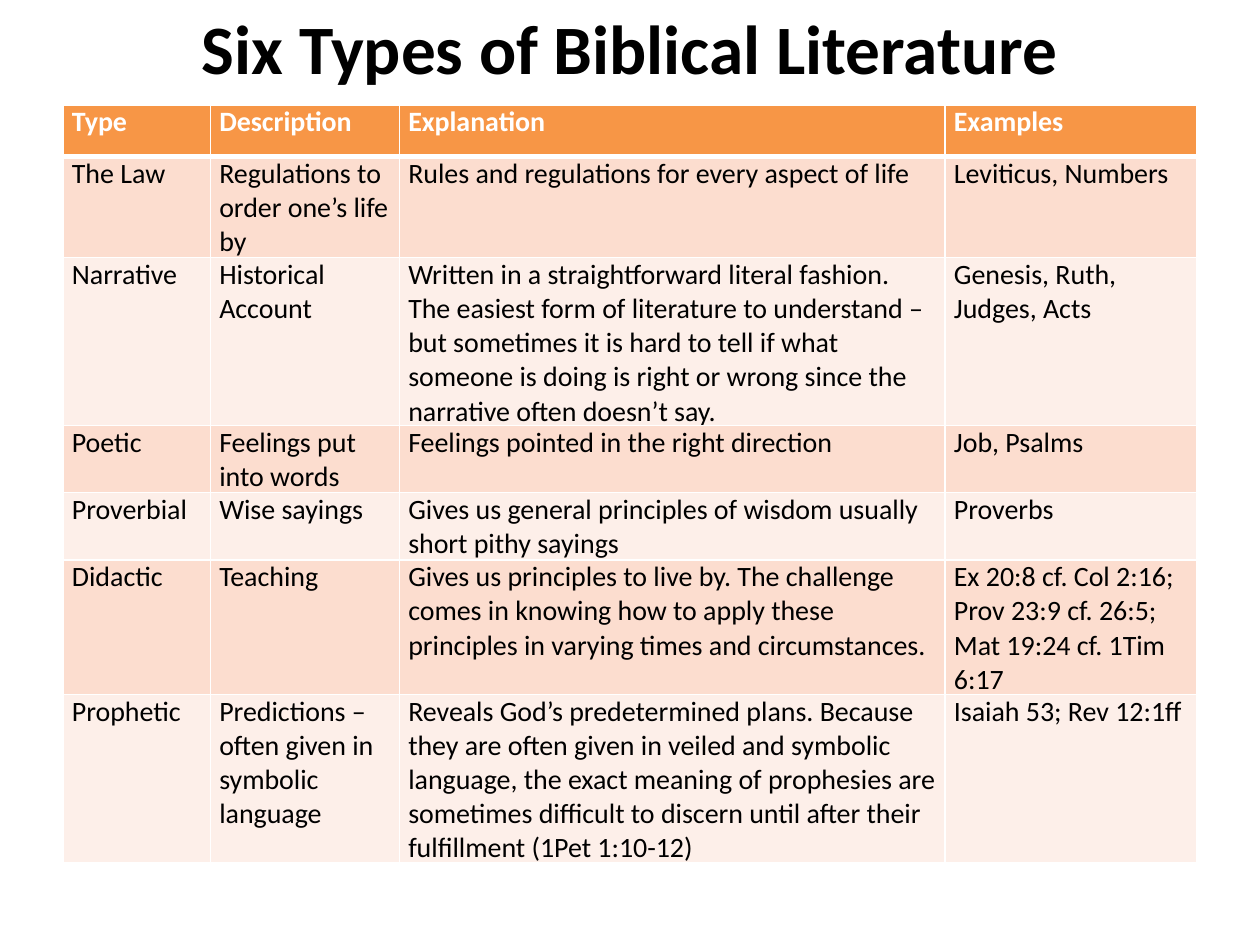
from collections import namedtuple
from dataclasses import dataclass

from lxml.etree import SubElement
from pptx import Presentation
from pptx.dml.color import RGBColor
from pptx.enum.text import MSO_ANCHOR, PP_ALIGN
from pptx.oxml.ns import qn
from pptx.util import Cm, Pt

Box = namedtuple("Box", "left top width height")


@dataclass(frozen=True)
class Theme:
    font: str = "Calibri"
    ink: str = "000000"
    paper: str = "FFFFFF"
    header: str = "F79646"
    bands: tuple = ("FCDDCF", "FDEFE9")
    title_size: float = 39.6
    table_size: float = 16
    thin_line: float = 1
    thick_line: float = 3


THEME = Theme()
TITLE = "Six Types of Biblical Literature"
COLUMN_WIDTHS = (2.97, 3.81, 11, 5.08)
ROW_HEIGHT = 1.04
CELL_MARGIN = 0.18
LITERATURE = [
    ("Type", "Description", "Explanation", "Examples"),
    ("The Law", "Regulations to order one’s life by",
     "Rules and regulations for every aspect of life", "Leviticus, Numbers"),
    ("Narrative", "Historical Account",
     "Written in a straightforward literal fashion. The easiest form of literature "
     "to understand – but sometimes it is hard to tell if what someone is doing is "
     "right or wrong since the narrative often doesn’t say.",
     "Genesis, Ruth, Judges, Acts"),
    ("Poetic", "Feelings put into words",
     "Feelings pointed in the right direction", "Job, Psalms"),
    ("Proverbial", "Wise sayings",
     "Gives us general principles of wisdom usually short pithy sayings", "Proverbs"),
    ("Didactic", "Teaching",
     "Gives us principles to live by. The challenge comes in knowing how to apply "
     "these principles in varying times and circumstances.",
     "Ex 20:8 cf. Col 2:16; Prov 23:9 cf. 26:5; Mat 19:24 cf. 1Tim 6:17"),
    ("Prophetic", "Predictions – often given in symbolic language",
     "Reveals God’s predetermined plans. Because they are often given in veiled and "
     "symbolic language, the exact meaning of prophesies are sometimes difficult to "
     "discern until after their fulfillment (1Pet 1:10-12)",
     "Isaiah 53; Rev 12:1ff"),
]


def format_text(frame, size, color, bold):
    for para in frame.paragraphs:
        for span in para.runs:
            span.font.name = THEME.font
            span.font.size = Pt(size)
            span.font.bold = bold
            span.font.color.rgb = RGBColor.from_string(color)


def set_borders(cell, top, bottom):
    properties = cell._tc.get_or_add_tcPr()
    widths = {"L": THEME.thin_line, "R": THEME.thin_line, "T": top, "B": bottom}
    for side, width in widths.items():
        line = SubElement(properties, qn(f"a:ln{side}"), w=str(Pt(width)))
        fill = SubElement(line, qn("a:solidFill"))
        SubElement(fill, qn("a:srgbClr"), val=THEME.paper)


def add_title(page, box):
    title = page.shapes.add_textbox(*map(Cm, box))
    frame = title.text_frame
    frame.word_wrap = True
    frame.vertical_anchor = MSO_ANCHOR.MIDDLE
    frame.text = TITLE
    frame.paragraphs[0].alignment = PP_ALIGN.CENTER
    format_text(frame, THEME.title_size, THEME.ink, True)


def fill_cell(cell, text, row_index):
    is_header = row_index == 0
    cell.margin_left = cell.margin_right = Cm(CELL_MARGIN)
    cell.margin_top = cell.margin_bottom = 0
    set_borders(
        cell,
        top=THEME.thick_line if row_index == 1 else THEME.thin_line,
        bottom=THEME.thick_line if is_header else THEME.thin_line,
    )
    background = THEME.header if is_header else THEME.bands[(row_index - 1) % 2]
    cell.fill.solid()
    cell.fill.fore_color.rgb = RGBColor.from_string(background)
    cell.text_frame.text = text
    color = THEME.paper if is_header else THEME.ink
    format_text(cell.text_frame, THEME.table_size, color, is_header)


def add_literature_table(page, box):
    table = page.shapes.add_table(
        len(LITERATURE), len(COLUMN_WIDTHS), *map(Cm, box)
    ).table
    for column, width in zip(table.columns, COLUMN_WIDTHS):
        column.width = Cm(width)
    for row_index, (row, texts) in enumerate(zip(table.rows, LITERATURE)):
        row.height = Cm(ROW_HEIGHT)
        for cell, text in zip(row.cells, texts):
            fill_cell(cell, text, row_index)


def main():
    deck = Presentation()
    deck.slide_width, deck.slide_height = Cm(25.4), Cm(19.05)
    page = deck.slides.add_slide(deck.slide_layouts[6])
    add_title(page, Box(1.27, 0, 22.86, 1.9))
    add_literature_table(
        page, Box(1.27, 2.12, sum(COLUMN_WIDTHS), ROW_HEIGHT * len(LITERATURE))
    )
    deck.save("out.pptx")


if __name__ == "__main__":
    main()
